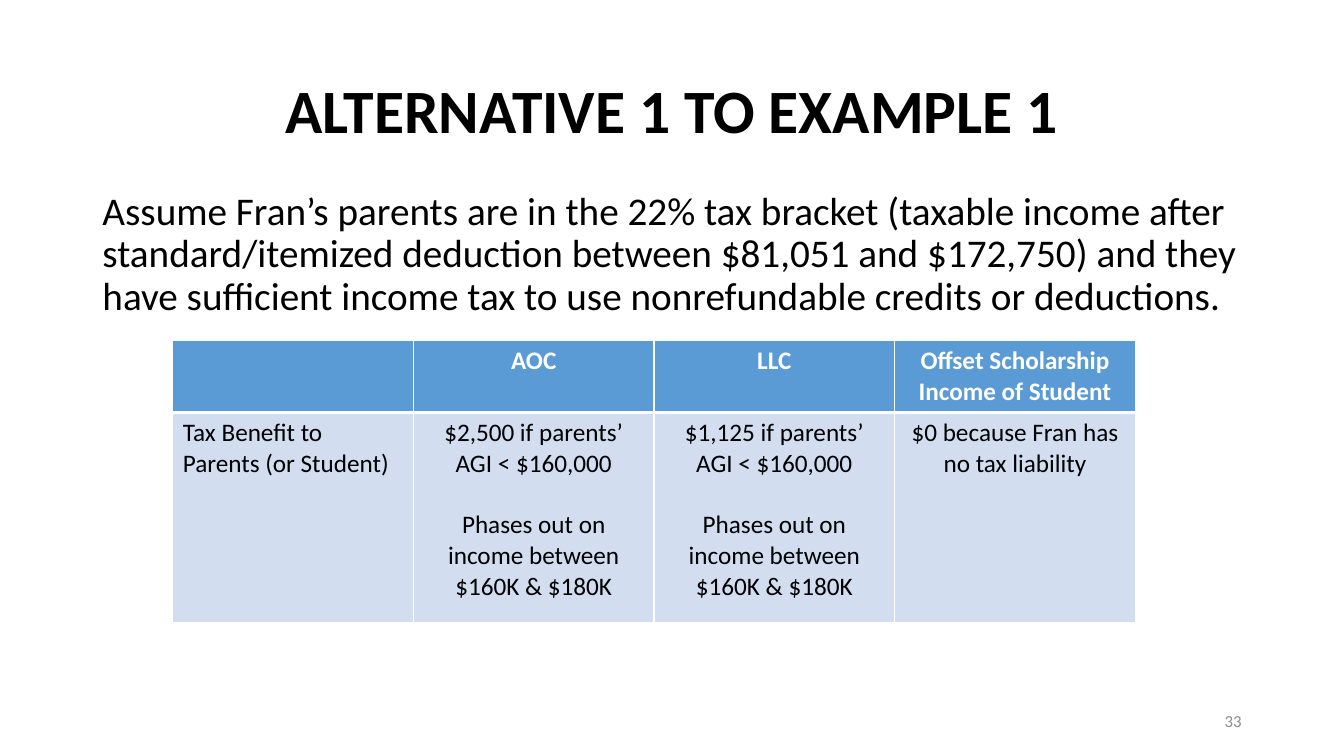
import pptx
import pptx.dml.color
import pptx.enum.text
import pptx.oxml
import pptx.oxml.ns
import pptx.util

Pt = pptx.util.Pt
Align = pptx.enum.text.PP_ALIGN
Anchor = pptx.enum.text.MSO_ANCHOR

PHASE_OUT = "Phases out on income between $160K & $180K"
ROWS = [
    [[], ["AOC"], ["LLC"], ["Offset Scholarship Income of Student"]],
    [
        ["Tax Benefit to Parents (or Student)"],
        ["$2,500 if parents’ AGI < $160,000", PHASE_OUT],
        ["$1,125 if parents’ AGI < $160,000", PHASE_OUT],
        ["$0 because Fran has no tax liability"],
    ],
]


class SlideBuilder:
    font_name = "Calibri"
    colors = {
        "text": "000000",
        "number": "8C8C8C",
        "white": "FFFFFF",
        "header": "5B9BD5",
        "body": "D2DEEF",
    }

    def __init__(self, presentation):
        self.slide = presentation.slides.add_slide(presentation.slide_layouts[1])

    def color(self, name):
        return pptx.dml.color.RGBColor.from_string(self.colors[name])

    def format(self, paragraph, size, color="text", bold=False, align=Align.LEFT):
        paragraph.alignment = align
        paragraph.font.name = self.font_name
        paragraph.font.size = Pt(size)
        paragraph.font.bold = bold
        paragraph.font.color.rgb = self.color(color)

    def place(self, shape, box, text, anchor):
        shape.left, shape.top, shape.width, shape.height = map(Pt, box)
        frame = shape.text_frame
        frame.word_wrap = True
        frame.auto_size = pptx.enum.text.MSO_AUTO_SIZE.NONE
        frame.vertical_anchor = anchor
        frame.text = text
        return frame.paragraphs[0]

    def title(self, box, text):
        paragraph = self.place(self.slide.shapes.title, box, text, Anchor.MIDDLE)
        self.format(paragraph, 44, bold=True, align=Align.CENTER)
        paragraph.line_spacing = 0.9

    def body(self, box, text):
        paragraph = self.place(self.slide.placeholders[1], box, text, Anchor.TOP)
        self.format(paragraph, 28)
        paragraph.line_spacing = 0.9
        paragraph.space_before = Pt(10)
        properties = paragraph._p.get_or_add_pPr()
        properties.set("marL", "0")
        properties.set("indent", "0")
        bullet = pptx.oxml.parse_xml(f"<a:buNone {pptx.oxml.ns.nsdecls('a')}/>")
        properties.append(bullet)

    def slide_number(self, box, text):
        shape = self.slide.shapes.add_textbox(*map(Pt, box))
        paragraph = self.place(shape, box, text, Anchor.MIDDLE)
        self.format(paragraph, 12, "number", align=Align.RIGHT)

    def borders(self, cell, widths):
        properties = cell._tc.get_or_add_tcPr()
        for position, (side, width) in enumerate(widths.items()):
            line = pptx.oxml.parse_xml(
                f'<a:ln{side} {pptx.oxml.ns.nsdecls("a")} w="{Pt(width)}">'
                f'<a:solidFill><a:srgbClr val="{self.colors["white"]}"/></a:solidFill>'
                f"</a:ln{side}>"
            )
            properties.insert(position, line)

    def cell(self, cell, texts, is_header, align):
        cell.fill.solid()
        cell.fill.fore_color.rgb = self.color("header" if is_header else "body")
        top, bottom = (1, 3) if is_header else (3, 1)
        self.borders(cell, {"L": 1, "R": 1, "T": top, "B": bottom})
        cell.text = "\n".join(texts)
        for index, paragraph in enumerate(cell.text_frame.paragraphs):
            self.format(paragraph, 18, "white" if is_header else "text", is_header, align)
            if index:
                paragraph.space_before = Pt(22)

    def table(self, box, rows, heights):
        frame = self.slide.shapes.add_table(len(rows), len(rows[0]), *map(Pt, box))
        table = frame.table
        for row_index, (row, height) in enumerate(zip(rows, heights)):
            table.rows[row_index].height = Pt(height)
            for column_index, texts in enumerate(row):
                align = Align.CENTER if column_index else Align.LEFT
                self.cell(table.cell(row_index, column_index), texts, row_index == 0, align)


def main():
    presentation = pptx.Presentation()
    presentation.slide_width = Pt(960)
    presentation.slide_height = Pt(540)
    builder = SlideBuilder(presentation)
    builder.title((66, 28.75, 828, 104.4), "ALTERNATIVE 1 TO EXAMPLE 1")
    builder.body(
        (66, 133.2, 828, 353.5),
        "Assume Fran’s parents are in the 22% tax bracket (taxable income after "
        "standard/itemized deduction between $81,051 and $172,750) and they have "
        "sufficient income tax to use nonrefundable credits or deductions.",
    )
    builder.table((123.4, 243.4, 687.6, 200.4), ROWS, [50.4, 150])
    builder.slide_number((678, 500.5, 216, 28.75), "33")
    presentation.save("out.pptx")


if __name__ == "__main__":
    main()
